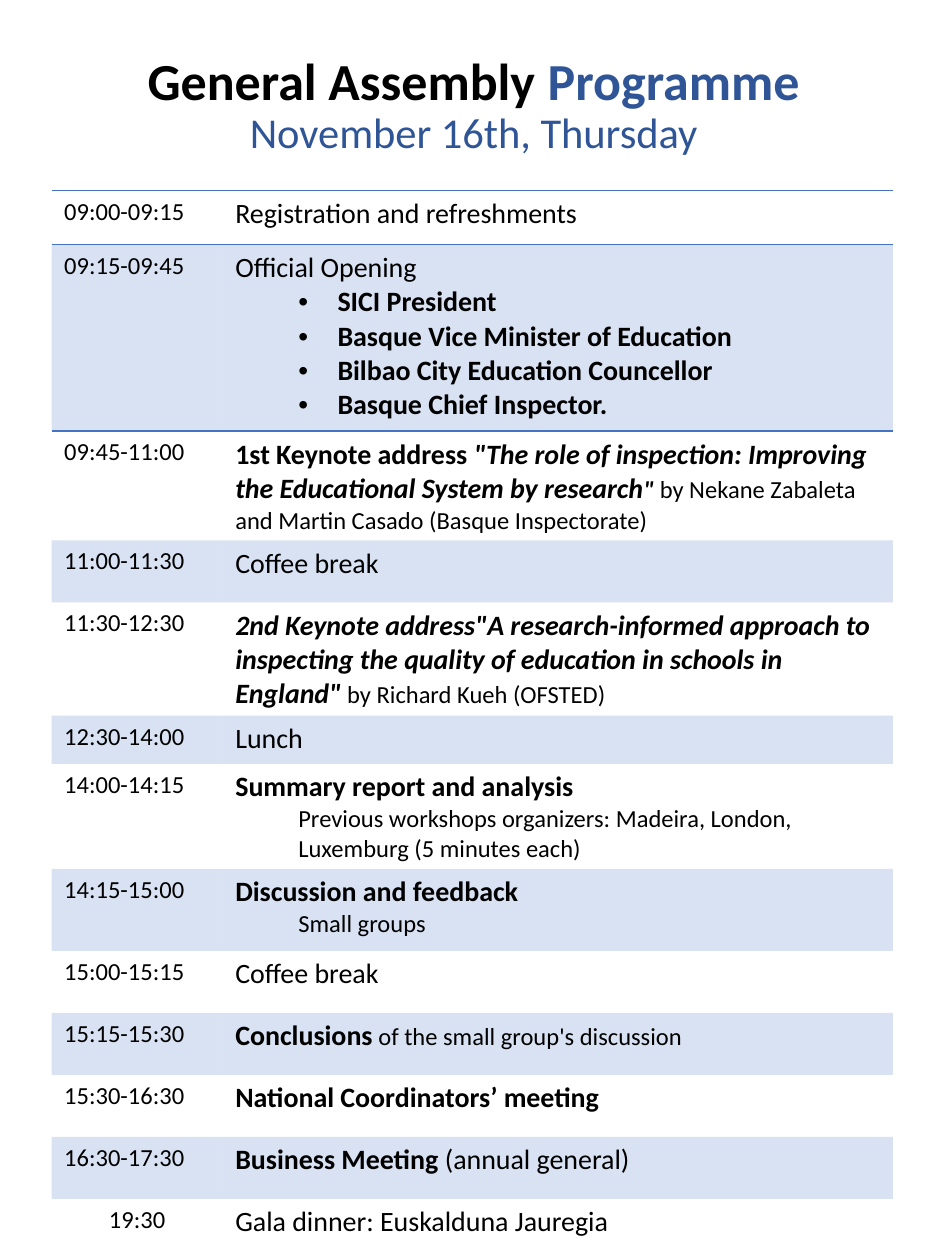
from lxml.etree import SubElement
from pptx import Presentation
from pptx.dml.color import RGBColor
from pptx.enum.text import MSO_ANCHOR, PP_ALIGN
from pptx.oxml.ns import qn
from pptx.util import Cm, Pt

COLOURS = {"text": "000000", "heading": "2F5597", "accent": "4472C4"}
FONT = "Calibri"
NO_STYLE = "{2D5ABB26-0587-4C30-8999-92F81FD0307C}"

# Style name: size, bold, italic
STYLES = {
    "small": (14, False, False),
    "normal": (16, False, False),
    "strong": (16, True, False),
    "quote": (16, True, True),
    "quote end": (14, True, True),
}

# Paragraph kind: level, left margin, first-line indent
INDENTS = {
    "bullet": (2, Cm(2.06), Cm(-0.79)),
    "note": (1, Cm(1.27), Cm(0)),
}

# Time, row height in cm, paragraphs of (kind, runs)
PROGRAMME = [
    ("09:00-09:15", 1.09, [("plain", [("Registration and refreshments", "normal")])]),
    ("09:15-09:45", 3.76, [
        ("plain", [("Official Opening", "normal")]),
        ("bullet", [("SICI President", "strong")]),
        ("bullet", [("Basque Vice Minister of Education", "strong")]),
        ("bullet", [("Bilbao City Education Councellor", "strong")]),
        ("bullet", [("Basque Chief Inspector.", "strong")]),
    ]),
    ("09:45-11:00", 2.03, [("plain", [
        ("1st Keynote address ", "strong"),
        ('"The role of inspection: Improving the Educational System by research', "quote"),
        ('" ', "quote end"),
        ("by Nekane Zabaleta and Martin Casado (Basque Inspectorate)", "small"),
    ])]),
    ("11:00-11:30", 1.25, [("plain", [("Coffee break", "normal")])]),
    ("11:30-12:30", 2.03, [("plain", [
        ('2nd Keynote address"A research-informed approach to inspecting '
         'the quality of education in schools in England"', "quote"),
        (" by Richard Kueh (OFSTED)", "small"),
    ])]),
    ("12:30-14:00", 0.97, [("plain", [("Lunch", "normal")])]),
    ("14:00-14:15", 1.65, [
        ("plain", [("Summary report and analysis", "strong")]),
        ("note", [("Previous workshops organizers: Madeira, London, "
                   "Luxemburg (5 minutes each)", "small")]),
    ]),
    ("14:15-15:00", 1.65, [
        ("plain", [("Discussion and feedback", "strong")]),
        ("note", [("Small groups", "small")]),
    ]),
    ("15:00-15:15", 1.25, [("plain", [("Coffee break", "normal")])]),
    ("15:15-15:30", 1.25, [("plain", [
        ("Conclusions", "strong"),
        (" of the small group's discussion", "small"),
    ])]),
    ("15:30-16:30", 1.25, [("plain", [("National Coordinators’ meeting", "strong")])]),
    ("16:30-17:30", 1.25, [("plain", [
        ("Business Meeting ", "strong"),
        ("(annual general)", "normal"),
    ])]),
    ("19:30", 1.25, [("plain", [("Gala dinner: Euskalduna Jauregia", "normal")])]),
]


def colour(name):
    return RGBColor.from_string(COLOURS[name])


def add_title(slide):
    frame = slide.shapes.add_textbox(Cm(1.32), Cm(0.36), Cm(16.46), Cm(3.58)).text_frame
    frame.word_wrap = True
    frame.vertical_anchor = MSO_ANCHOR.MIDDLE
    heading = frame.paragraphs[0]
    heading.alignment = PP_ALIGN.CENTER
    heading.line_spacing = 0.9
    heading.font.name = FONT
    for words, size, bold, tone in [
        ("General Assembly ", 29.7, True, "text"),
        ("Programme", 29.7, True, "heading"),
        ("November 16th, Thursday", 24.3, False, "heading"),
    ]:
        if not bold:
            heading.add_line_break()
        run = heading.add_run()
        run.text = words
        run.font.size = Pt(size)
        run.font.bold = bold
        run.font.color.rgb = colour(tone)


def indent(paragraph, kind):
    paragraph.level, margin, first_line = INDENTS[kind]
    properties = paragraph._p.get_or_add_pPr()
    properties.set("marL", str(margin))
    properties.set("indent", str(first_line))
    if kind == "bullet":
        SubElement(properties, qn("a:buFont"), typeface="Arial")
        SubElement(properties, qn("a:buChar"), char="•")


def write_paragraphs(cell, paragraphs):
    frame = cell.text_frame
    for position, (kind, runs) in enumerate(paragraphs):
        paragraph = frame.add_paragraph() if position else frame.paragraphs[0]
        if kind in INDENTS:
            indent(paragraph, kind)
        paragraph.font.name = FONT
        paragraph.font.color.rgb = colour("text")
        for words, style in runs:
            run = paragraph.add_run()
            run.text = words
            font = paragraph.font if len(runs) == 1 else run.font
            size, font.bold, font.italic = STYLES[style]
            font.size = Pt(size)


def add_rule(cell, side):
    """Draw a thin accent border on the 'T' (top) or 'B' (bottom) of a cell."""
    line = SubElement(cell._tc.get_or_add_tcPr(), qn(f"a:ln{side}"), w=str(Pt(1)))
    fill = SubElement(line, qn("a:solidFill"))
    SubElement(fill, qn("a:srgbClr"), val=COLOURS["accent"])


def shade(cell, banded):
    if not banded:
        cell.fill.background()
        return
    cell.fill.solid()
    cell.fill.fore_color.rgb = colour("accent")
    tint = cell._tc.tcPr.find(qn("a:solidFill")).find(qn("a:srgbClr"))
    SubElement(tint, qn("a:alpha"), val="20000")


def add_programme(slide):
    total = sum(height for _, height, _ in PROGRAMME)
    table = slide.shapes.add_table(
        len(PROGRAMME), 2, Cm(1.04), Cm(3.84), Cm(16.96), Cm(total)).table
    table.first_row = False
    table.horz_banding = False
    table._tbl.tblPr.find(qn("a:tableStyleId")).text = NO_STYLE
    table.columns[0].width = Cm(3.45)
    table.columns[1].width = Cm(13.51)

    last = len(PROGRAMME) - 1
    rules = {0: "TB", 1: "T", last: "B"}
    for index, (time, height, session) in enumerate(PROGRAMME):
        table.rows[index].height = Cm(height)
        time_cell, session_cell = table.rows[index].cells
        write_paragraphs(time_cell, [("plain", [(time, "small")])])
        write_paragraphs(session_cell, session)
        for cell in (time_cell, session_cell):
            for side in rules.get(index, ""):
                add_rule(cell, side)
            shade(cell, banded=index % 2 == 1)
    table.cell(last, 0).text_frame.paragraphs[0].alignment = PP_ALIGN.CENTER


def main():
    presentation = Presentation()
    presentation.slide_width = Cm(19.05)
    presentation.slide_height = Cm(25.4)
    slide = presentation.slides.add_slide(presentation.slide_layouts[6])
    add_title(slide)
    add_programme(slide)
    presentation.save("out.pptx")


if __name__ == "__main__":
    main()
